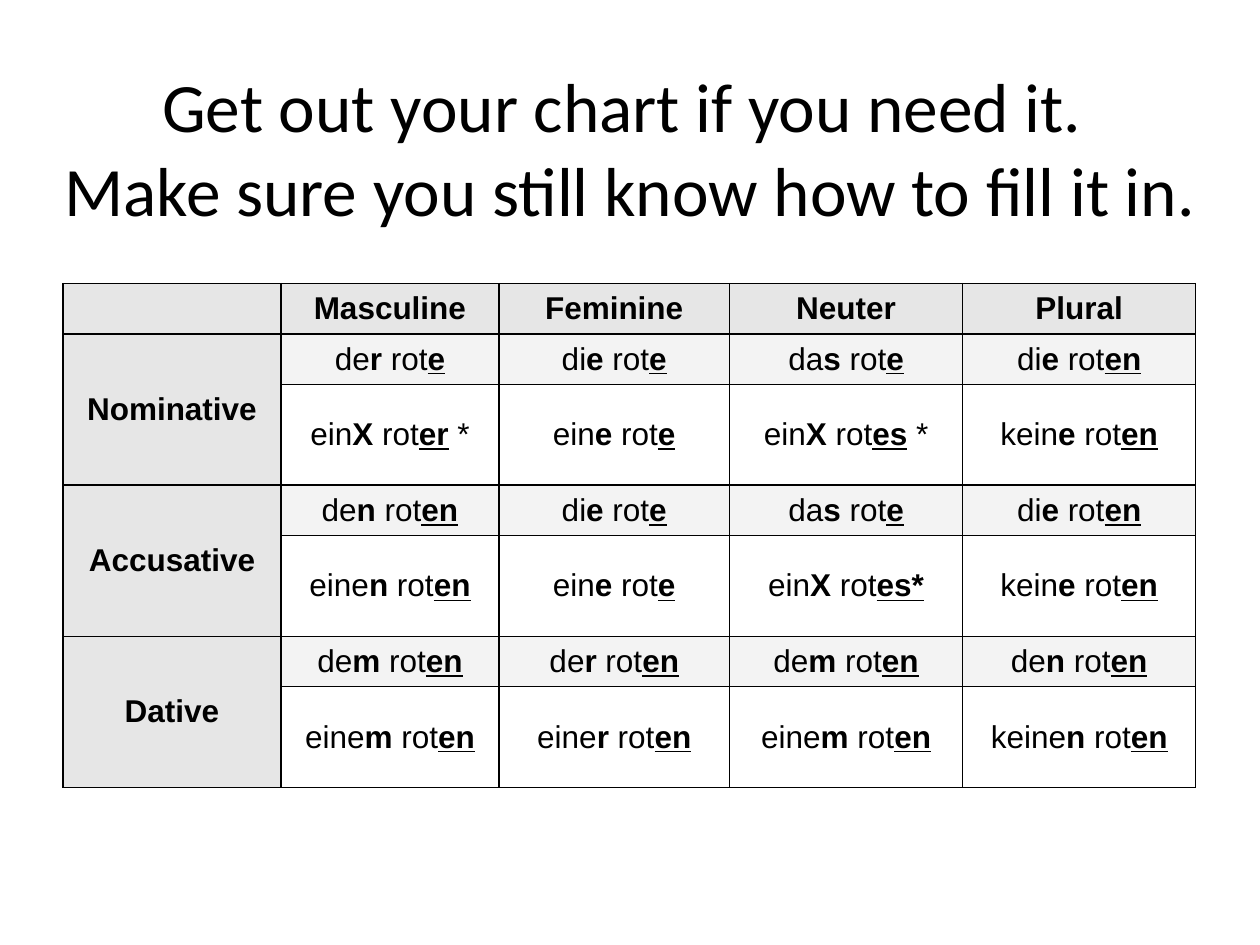
from lxml.etree import SubElement
from pptx import Presentation
from pptx.dml.color import RGBColor as RGB
from pptx.enum.text import MSO_ANCHOR as Anchor, PP_ALIGN as Align
from pptx.oxml.ns import qn
from pptx.util import Inches, Pt

TITLE = "Get out your chart if you need it. \vMake sure you still know how to fill it in."
GENDERS = ["Masculine", "Feminine", "Neuter", "Plural"]
# Bars split each phrase into stem, article ending, adjective stem,
# adjective ending and an optional note.
CASES = {
    "Nominative": [
        ["de|r| rot|e", "di|e| rot|e", "da|s| rot|e", "di|e| rot|en"],
        ["ein|X| rot|er| *", "ein|e| rot|e", "ein|X| rot|es| *", "kein|e| rot|en"],
    ],
    "Accusative": [
        ["de|n| rot|en", "di|e| rot|e", "da|s| rot|e", "di|e| rot|en"],
        ["eine|n| rot|en", "ein|e| rot|e", "ein|X| rot|es*", "kein|e| rot|en"],
    ],
    "Dative": [
        ["de|m| rot|en", "de|r| rot|en", "de|m| rot|en", "de|n| rot|en"],
        ["eine|m| rot|en", "eine|r| rot|en", "eine|m| rot|en", "keine|n| rot|en"],
    ],
}
COLORS = {"head": "E6E6E6", "definite": "F3F3F3", "indefinite": "FFFFFF", "ink": "000000"}
COLS = [1.73, 1.73, 1.83, 1.85, 1.85]
UNIT = 0.4
ROWS = [UNIT] + [UNIT, 2 * UNIT] * len(CASES)


def style(run, font, size, bold=False, under=False):
    run.font.name, run.font.size = font, Pt(size)
    run.font.bold, run.font.underline = bold, under
    run.font.color.rgb = RGB.from_string(COLORS["ink"])


def frame(cell):
    """Draw a thin line on all four sides of the cell."""
    props = cell._tc.get_or_add_tcPr()
    for side in ("lnL", "lnR", "lnT", "lnB"):
        line = SubElement(props, qn("a:" + side), w=str(Pt(1)))
        fill = SubElement(line, qn("a:solidFill"))
        SubElement(fill, qn("a:srgbClr"), val=COLORS["ink"])


def put(cell, text, color, head=False):
    frame(cell)
    cell.fill.solid()
    cell.fill.fore_color.rgb = RGB.from_string(COLORS[color])
    cell.vertical_anchor = Anchor.MIDDLE
    cell.margin_left = cell.margin_right = Inches(0.07)
    cell.margin_top = cell.margin_bottom = 0
    para = cell.text_frame.paragraphs[0]
    para.alignment = Align.CENTER
    for i, part in enumerate(text.split("|") if text else []):
        run = para.add_run()
        run.text = part
        style(run, "Arial", 18, head or i % 2 == 1, i == 3)


def main():
    deck = Presentation()
    deck.slide_width, deck.slide_height = Inches(10), Inches(7.5)
    slide = deck.slides.add_slide(deck.slide_layouts[5])

    title = slide.shapes.title
    title.left, title.top = 0, Inches(0.33)
    title.width, title.height = deck.slide_width, Inches(1.67)
    title.text_frame.text = TITLE
    title.text_frame.vertical_anchor = Anchor.MIDDLE
    para = title.text_frame.paragraphs[0]
    para.alignment = Align.CENTER
    for run in para.runs:
        style(run, "Calibri", 39.6)

    table = slide.shapes.add_table(
        len(ROWS), len(COLS), Inches(0.5), Inches(2.25),
        Inches(sum(COLS)), Inches(sum(ROWS))).table
    table.first_row = table.horz_banding = False
    for col, width in zip(table.columns, COLS):
        col.width = Inches(width)
    for row, height in zip(table.rows, ROWS):
        row.height = Inches(height)

    for c, text in enumerate([""] + GENDERS):
        put(table.cell(0, c), text, "head", True)
    for n, (case, pair) in enumerate(CASES.items()):
        top = 1 + 2 * n
        table.cell(top, 0).merge(table.cell(top + 1, 0))
        put(table.cell(top, 0), case, "head", True)
        put(table.cell(top + 1, 0), "", "head")
        for r, (kind, forms) in enumerate(zip(("definite", "indefinite"), pair)):
            for c, form in enumerate(forms, 1):
                put(table.cell(top + r, c), form, kind)

    deck.save("out.pptx")


if __name__ == "__main__":
    main()
